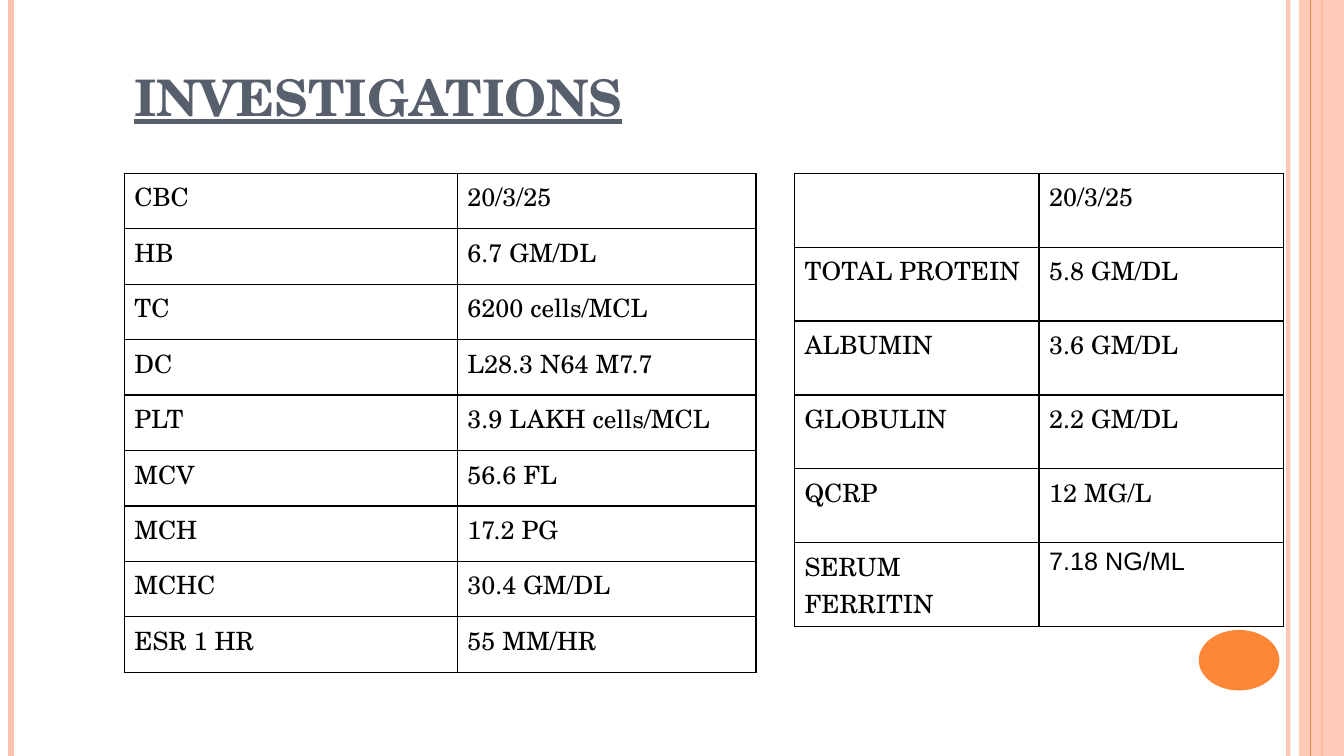
from dataclasses import dataclass

from lxml.etree import SubElement
from pptx import Presentation
from pptx.dml.color import RGBColor
from pptx.enum.shapes import MSO_CONNECTOR as Connector, MSO_SHAPE as Shape
from pptx.enum.text import MSO_ANCHOR as Anchor, PP_ALIGN as Align
from pptx.oxml.ns import qn
from pptx.util import Pt


@dataclass(frozen=True)
class Theme:
    """Colours, fonts and type sizes of the slide."""
    peach: str = "FEC3AE"
    orange: str = "FE8637"
    slate: str = "575F6D"
    black: str = "000000"
    serif: str = "TeX Gyre Schola"
    sans: str = "Arial"
    title_size: int = 36
    body_size: int = 18


THEME = Theme()
WIDTH, HEIGHT = 960, 540
TABLE_TOP = 123.8

BLOOD_COUNT = [
    ("CBC", "20/3/25"),
    ("HB", "6.7 GM/DL"),
    ("TC", "6200 cells/MCL"),
    ("DC", "L28.3 N64 M7.7"),
    ("PLT", "3.9 LAKH cells/MCL"),
    ("MCV", "56.6 FL"),
    ("MCH", "17.2 PG"),
    ("MCHC", "30.4 GM/DL"),
    ("ESR 1 HR", "55 MM/HR"),
]
PROTEINS = [
    ("", "20/3/25"),
    ("TOTAL PROTEIN", "5.8 GM/DL"),
    ("ALBUMIN", "3.6 GM/DL"),
    ("GLOBULIN", "2.2 GM/DL"),
    ("QCRP", "12 MG/L"),
    ("SERUM FERRITIN", "7.18 NG/ML"),
]


def set_alpha(fill_parent, percent):
    """Make the solid colour below an element partly transparent."""
    colour = next(fill_parent.iter(qn("a:srgbClr")))
    SubElement(colour, qn("a:alpha"), val=str(percent * 1000))


def style_font(font, name, size, colour):
    """Set the face, size and colour of a font."""
    font.name, font.size = name, Pt(size)
    font.color.rgb = RGBColor.from_string(colour)


def add_stripe(slide, x, colour, weight, alpha=100):
    """Draw a vertical line over the full slide height."""
    stripe = slide.shapes.add_connector(
        Connector.STRAIGHT, Pt(x), Pt(0), Pt(x), Pt(HEIGHT))
    stripe.line.color.rgb = RGBColor.from_string(colour)
    stripe.line.width = Pt(weight)
    properties = stripe._element.spPr
    SubElement(properties, qn("a:effectLst"))
    if alpha < 100:
        set_alpha(properties, alpha)


def add_block(slide, preset, box, colour, alpha=100):
    """Draw a filled shape without outline."""
    block = slide.shapes.add_shape(preset, *map(Pt, box))
    block.shadow.inherit = False
    block.fill.solid()
    block.fill.fore_color.rgb = RGBColor.from_string(colour)
    block.line.fill.background()
    if alpha < 100:
        set_alpha(block._element.spPr, alpha)


def add_frame(slide):
    """Draw the stripes, side band and disc around the content."""
    add_stripe(slide, 920.2, THEME.peach, 3, 93)
    add_stripe(slide, 7.9, THEME.peach, 4.5)
    add_stripe(slide, 944, THEME.orange, 1.5)
    add_block(slide, Shape.RECTANGLE, (928, 0, 32, HEIGHT), THEME.peach, 87)
    add_stripe(slide, 936, THEME.orange, 0.75)
    add_block(slide, Shape.OVAL, (856.3, 450, 57.6, 43.2), THEME.orange)


def set_title(slide, text):
    """Place and format the slide title."""
    title = slide.shapes.title
    title.left, title.top, title.width, title.height = map(
        Pt, (88.6, 47.5, 676.8, 48.2))
    frame = title.text_frame
    frame.text = text
    frame.vertical_anchor = Anchor.MIDDLE
    heading = frame.paragraphs[0]
    heading.alignment = Align.LEFT
    heading.line_spacing = 0.9
    font = heading.runs[0].font
    style_font(font, THEME.serif, THEME.title_size, THEME.slate)
    font.bold = font.underline = True


def add_borders(cell):
    """Clear the cell fill and rule its four sides in black."""
    properties = cell._tc.get_or_add_tcPr()
    for side in ("a:lnL", "a:lnR", "a:lnT", "a:lnB"):
        rule = SubElement(properties, qn(side), w=str(Pt(1)))
        fill = SubElement(rule, qn("a:solidFill"))
        SubElement(fill, qn("a:srgbClr"), val=THEME.black)
    cell.fill.background()


def add_results(slide, results, left, column_widths, row_height):
    """Add a ruled table of test names and values."""
    grid = slide.shapes.add_table(
        len(results), len(column_widths), Pt(left), Pt(TABLE_TOP),
        Pt(sum(column_widths)), Pt(row_height * len(results))).table
    grid.first_row = grid.horz_banding = False
    for column, width in zip(grid.columns, column_widths):
        column.width = Pt(width)
    for row, result in zip(grid.rows, results):
        row.height = Pt(row_height)
        for cell, text in zip(row.cells, result):
            cell.text = text
            style_font(cell.text_frame.paragraphs[0].font,
                       THEME.serif, THEME.body_size, THEME.black)
            for run in cell.text_frame.paragraphs[0].runs:
                style_font(run.font, THEME.serif, THEME.body_size, THEME.black)
            add_borders(cell)
    return grid


def main():
    """Build the investigations slide."""
    deck = Presentation()
    deck.slide_width, deck.slide_height = Pt(WIDTH), Pt(HEIGHT)
    slide = deck.slides.add_slide(deck.slide_layouts[5])
    add_frame(slide)
    set_title(slide, "INVESTIGATIONS")
    add_results(slide, BLOOD_COUNT, 88.8, (237.8, 213.4), 39.6)
    proteins = add_results(slide, PROTEINS, 567.5, (174.7, 174.7), 52.8)
    ferritin = proteins.cell(len(PROTEINS) - 1, 1).text_frame.paragraphs[0]
    ferritin.runs[0].font.name = THEME.sans
    deck.save("out.pptx")


if __name__ == "__main__":
    main()
